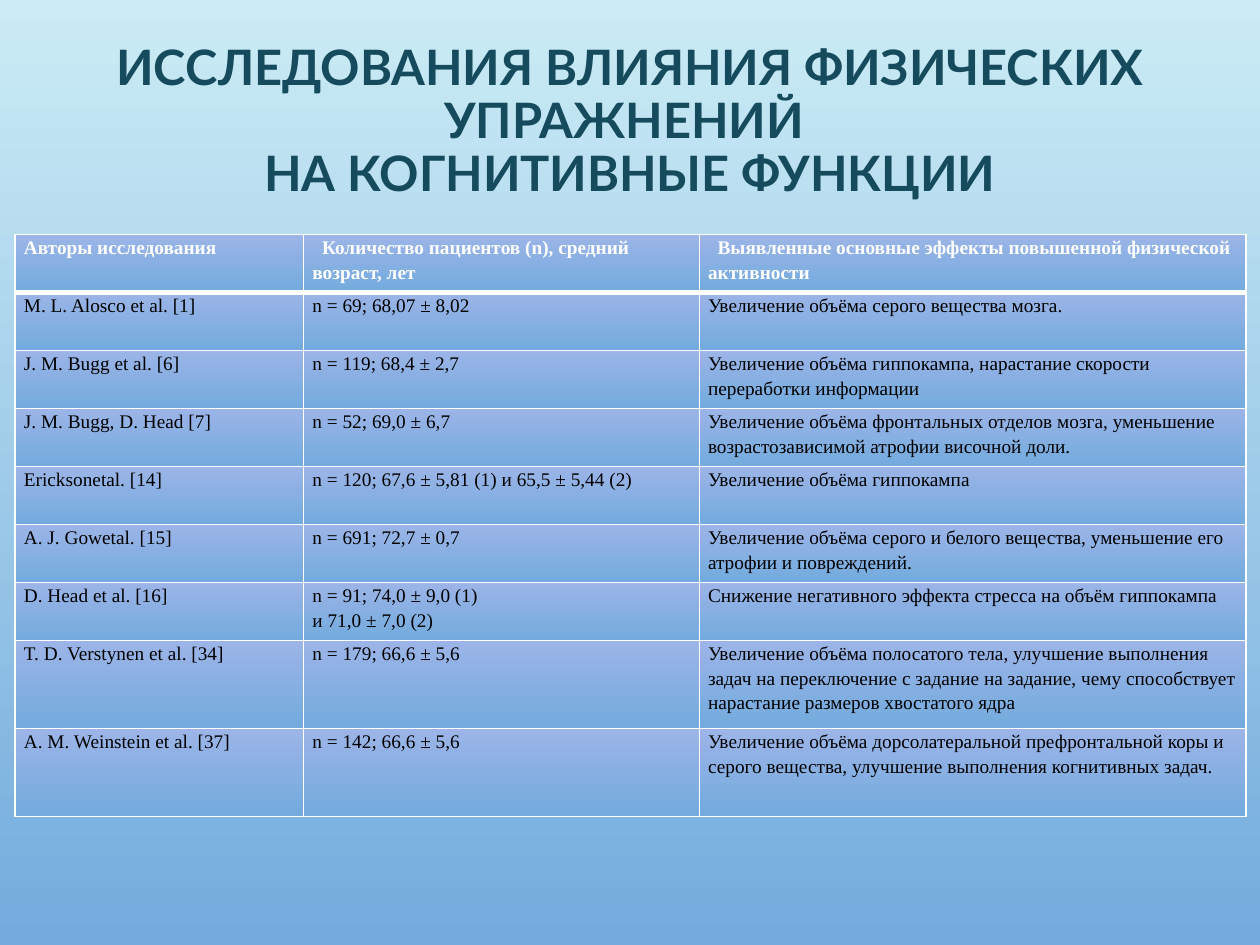
from dataclasses import dataclass

from lxml.etree import SubElement
from pptx import Presentation
from pptx.dml.color import RGBColor
from pptx.enum.text import MSO_ANCHOR as Anchor, PP_ALIGN as Align
from pptx.oxml.ns import qn
from pptx.util import Inches, Pt

SLIDE_WIDTH, SLIDE_HEIGHT = Inches(10), Inches(7.5)
WHITE, BLACK, TEAL = "FFFFFF", "000000", "154B5C"
SKY, PERIWINKLE, BLUE = "CBECF5", "9CB4E7", "73ABDD"

# Column widths and row heights in percent of the slide
COLUMN_SHARES = (22.9, 31.4, 43.4)
SHORT_ROW, TALL_ROW = 6.14, 9.33


@dataclass
class Study:
    authors: str
    patients: str
    effects: str
    height: float = SHORT_ROW


HEADER = Study(
    "Авторы исследования",
    "Количество пациентов (n), средний возраст, лет",
    "Выявленные основные эффекты повышенной физической активности",
)
STUDIES = [
    Study("M. L. Alosco et al. [1]", "n = 69; 68,07 ± 8,02",
          "Увеличение объёма серого вещества мозга."),
    Study("J. M. Bugg et al. [6]", "n = 119; 68,4 ± 2,7",
          "Увеличение объёма гиппокампа, нарастание скорости переработки информации"),
    Study("J. M. Bugg, D. Head [7]", "n = 52; 69,0 ± 6,7",
          "Увеличение объёма фронтальных отделов мозга, уменьшение "
          "возрастозависимой атрофии височной доли."),
    Study("Ericksonetal. [14]", "n = 120; 67,6 ± 5,81 (1) и 65,5 ± 5,44 (2)",
          "Увеличение объёма гиппокампа"),
    Study("A. J. Gowetal. [15]", "n = 691; 72,7 ± 0,7",
          "Увеличение объёма серого и белого вещества, уменьшение его "
          "атрофии и повреждений."),
    Study("D. Head et al. [16]", "n = 91; 74,0 ± 9,0 (1)\nи 71,0 ± 7,0 (2)",
          "Снижение негативного эффекта стресса на объём гиппокампа"),
    Study("T. D. Verstynen et al. [34]", "n = 179; 66,6 ± 5,6",
          "Увеличение объёма полосатого тела, улучшение выполнения задач на "
          "переключение с задание на задание, чему способствует нарастание "
          "размеров хвостатого ядра", TALL_ROW),
    Study("A. M. Weinstein et al. [37]", "n = 142; 66,6 ± 5,6",
          "Увеличение объёма дорсолатеральной префронтальной коры и серого "
          "вещества, улучшение выполнения когнитивных задач.", TALL_ROW),
]


def across(percent: float) -> int:
    return round(SLIDE_WIDTH * percent / 100)


def down(percent: float) -> int:
    return round(SLIDE_HEIGHT * percent / 100)


def color(hex_code: str) -> RGBColor:
    return RGBColor.from_string(hex_code)


def fill_downward(fill, top: str, bottom: str) -> None:
    fill.gradient()
    fill.gradient_angle = 270
    for stop, position, hex_code in zip(fill.gradient_stops, (0, 1), (top, bottom)):
        stop.position = position
        stop.color.rgb = color(hex_code)


def write(frame, text: str, *, font: str, size: float, hex_code: str,
          bold: bool = False, align=Align.LEFT, spacing: float = 1.0,
          indent: int = 0) -> None:
    frame.word_wrap = True
    frame.text = text
    for paragraph in frame.paragraphs:
        paragraph.alignment = align
        paragraph.line_spacing = spacing
        if indent:
            paragraph._p.get_or_add_pPr().set("indent", str(indent))
        for run in paragraph.runs:
            run.font.name, run.font.size, run.font.bold = font, Pt(size), bold
            run.font.color.rgb = color(hex_code)


def add_border(cell, side: str, points: float) -> None:
    line = SubElement(cell._tc.get_or_add_tcPr(), qn(f"a:ln{side}"), w=str(Pt(points)))
    solid = SubElement(line, qn("a:solidFill"))
    SubElement(solid, qn("a:srgbClr"), val=WHITE)


def add_title(slide) -> None:
    box = slide.shapes.add_textbox(across(5), down(4.8), across(90), down(18))
    frame = box.text_frame
    frame.vertical_anchor = Anchor.MIDDLE
    frame.margin_bottom = Inches(0.17)
    write(frame, "ИССЛЕДОВАНИЯ ВЛИЯНИЯ ФИЗИЧЕСКИХ УПРАЖНЕНИЙ \vНА КОГНИТИВНЫЕ ФУНКЦИИ",
          font="Lato", size=27.9, hex_code=TEAL, bold=True,
          align=Align.CENTER, spacing=0.9)


def add_study_table(slide, rows: list[Study]) -> None:
    table = slide.shapes.add_table(
        len(rows), len(COLUMN_SHARES), across(1.2), down(24.8),
        across(sum(COLUMN_SHARES)), down(sum(row.height for row in rows))).table
    table.horz_banding = False
    for column, share in zip(table.columns, COLUMN_SHARES):
        column.width = across(share)
    for row_index, study in enumerate(rows):
        table.rows[row_index].height = down(study.height)
        is_header = row_index == 0
        # The rule between the header and the studies is heavier
        borders = {"L": 1, "R": 1, "T": 3 if row_index == 1 else 1,
                   "B": 3 if is_header else 1}
        texts = (study.authors, study.patients, study.effects)
        for column_index, text in enumerate(texts):
            cell = table.cell(row_index, column_index)
            cell.margin_left = cell.margin_right = Inches(0.07)
            cell.margin_top = cell.margin_bottom = 0
            for side, points in borders.items():
                add_border(cell, side, points)
            fill_downward(cell.fill, PERIWINKLE, BLUE)
            write(cell.text_frame, text, font="Times New Roman", size=11,
                  hex_code=WHITE if is_header else BLACK, bold=is_header,
                  spacing=1.15,
                  indent=Pt(5.5) if is_header and column_index else 0)


def main() -> None:
    presentation = Presentation()
    presentation.slide_width, presentation.slide_height = SLIDE_WIDTH, SLIDE_HEIGHT
    slide = presentation.slides.add_slide(presentation.slide_layouts[6])
    fill_downward(slide.background.fill, SKY, BLUE)
    add_title(slide)
    add_study_table(slide, [HEADER, *STUDIES])
    presentation.save("out.pptx")


if __name__ == "__main__":
    main()
